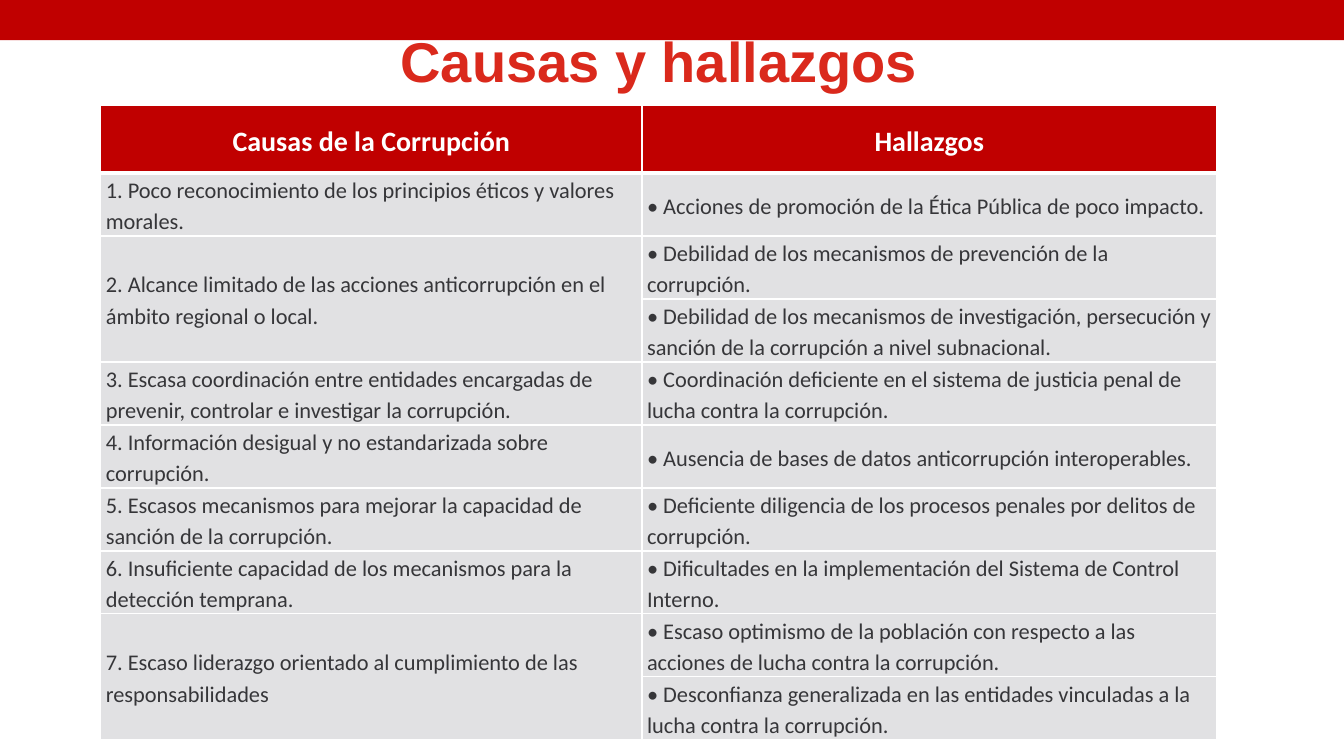
from dataclasses import dataclass

from lxml import etree
from pptx import Presentation
from pptx import util as u
from pptx.dml.color import RGBColor
from pptx.enum import shapes, text
from pptx.oxml import ns

COLORS = {
    "red": "C00000",
    "title": "DA291C",
    "body": "E1E1E3",
    "ink": "363639",
    "white": "FFFFFF",
}
SLIDE_WIDTH, SLIDE_HEIGHT = 960, 540
HEADER_HEIGHT, ROW_HEIGHT = 48.6, 45
COLUMN_WIDTHS = (386.6, 410.4)


@dataclass(frozen=True)
class TextStyle:
    font: str
    size: float
    color: str
    bold: bool = False
    align: text.PP_ALIGN = text.PP_ALIGN.LEFT
    spacing: float = 1.15


@dataclass(frozen=True)
class CellStyle:
    text: TextStyle
    fill: str
    bottom: float = 1


@dataclass(frozen=True)
class Cause:
    name: str
    findings: tuple[str, ...]


CENTER = text.PP_ALIGN.CENTER
TITLE = TextStyle("Arial", 40, "title", True, CENTER, 0.9)
HEADER = CellStyle(TextStyle("Calibri", 20, "white", True, CENTER), "red", 3)
BODY = CellStyle(TextStyle("Calibri", 16, "ink"), "body")

HEADINGS = ("Causas de la Corrupción", "Hallazgos")
CAUSES = (
    Cause("Poco reconocimiento de los principios éticos y valores morales.",
          ("Acciones de promoción de la Ética Pública de poco impacto.",)),
    Cause("Alcance limitado de las acciones anticorrupción en el ámbito regional o local.",
          ("Debilidad de los mecanismos de prevención de la corrupción.",
           "Debilidad de los mecanismos de investigación, persecución y sanción "
           "de la corrupción a nivel subnacional.")),
    Cause("Escasa coordinación entre entidades encargadas de prevenir, controlar "
          "e investigar la corrupción.",
          ("Coordinación deficiente en el sistema de justicia penal de lucha "
           "contra la corrupción.",)),
    Cause("Información desigual y no estandarizada sobre corrupción.",
          ("Ausencia de bases de datos anticorrupción interoperables.",)),
    Cause("Escasos mecanismos para mejorar la capacidad de sanción de la corrupción.",
          ("Deficiente diligencia de los procesos penales por delitos de corrupción.",)),
    Cause("Insuficiente capacidad de los mecanismos para la detección temprana.",
          ("Dificultades en la implementación del Sistema de Control Interno.",)),
    Cause("Escaso liderazgo orientado al cumplimiento de las responsabilidades",
          ("Escaso optimismo de la población con respecto a las acciones de lucha "
           "contra la corrupción.",
           "Desconfianza generalizada en las entidades vinculadas a la lucha "
           "contra la corrupción.")),
)


def rgb(name: str) -> RGBColor:
    return RGBColor.from_string(COLORS[name])


def write(frame, words: str, style: TextStyle) -> None:
    paragraph = frame.paragraphs[0]
    paragraph.alignment = style.align
    paragraph.line_spacing = style.spacing
    run = paragraph.add_run()
    run.text = words
    run.font.name = style.font
    run.font.size = u.Pt(style.size)
    run.font.bold = style.bold
    run.font.color.rgb = rgb(style.color)


def set_borders(cell, bottom: float) -> None:
    """Put white lines on all four sides, ahead of the fill as the schema asks."""
    properties = cell._tc.get_or_add_tcPr()
    widths = {"lnL": 1, "lnR": 1, "lnT": 1, "lnB": bottom}
    for position, (side, width) in enumerate(widths.items()):
        line = etree.Element(ns.qn(f"a:{side}"), w=str(u.Pt(width)))
        fill = etree.SubElement(line, ns.qn("a:solidFill"))
        etree.SubElement(fill, ns.qn("a:srgbClr"), val=COLORS["white"])
        properties.insert(position, line)


def style_cell(cell, style: CellStyle) -> None:
    cell.margin_left = cell.margin_right = u.Pt(3.6)
    cell.margin_top = cell.margin_bottom = u.Pt(0)
    cell.vertical_anchor = text.MSO_ANCHOR.MIDDLE
    cell.fill.solid()
    cell.fill.fore_color.rgb = rgb(style.fill)
    set_borders(cell, style.bottom)


def draw_band(slide) -> None:
    band = slide.shapes.add_shape(shapes.MSO_SHAPE.RECTANGLE, u.Pt(0), u.Pt(0),
                                  u.Pt(SLIDE_WIDTH), u.Pt(28.8))
    band.shadow.inherit = False
    band.fill.solid()
    band.fill.fore_color.rgb = rgb("red")
    band.line.fill.background()


def draw_title(slide) -> None:
    title = slide.shapes.add_textbox(u.Pt(0), u.Pt(21), u.Pt(941), u.Pt(50))
    title.text_frame.word_wrap = True
    title.text_frame.vertical_anchor = text.MSO_ANCHOR.MIDDLE
    write(title.text_frame, "Causas y hallazgos", TITLE)


def draw_causes(slide) -> None:
    finding_count = sum(len(cause.findings) for cause in CAUSES)
    table = slide.shapes.add_table(
        finding_count + 1, len(HEADINGS), u.Pt(72), u.Pt(75),
        u.Pt(sum(COLUMN_WIDTHS)), u.Pt(HEADER_HEIGHT + finding_count * ROW_HEIGHT),
    ).table
    table.horz_banding = False
    for column, width in zip(table.columns, COLUMN_WIDTHS):
        column.width = u.Pt(width)
    for index, row in enumerate(table.rows):
        row.height = u.Pt(ROW_HEIGHT if index else HEADER_HEIGHT)
        for cell in row.cells:
            style_cell(cell, BODY if index else HEADER)

    for column, heading in enumerate(HEADINGS):
        write(table.cell(0, column).text_frame, heading, HEADER.text)
    first = 1
    for number, cause in enumerate(CAUSES, start=1):
        last = first + len(cause.findings) - 1
        cause_cell = table.cell(first, 0)
        if last > first:
            cause_cell.merge(table.cell(last, 0))
        write(cause_cell.text_frame, f"{number}. {cause.name}", BODY.text)
        for row, finding in enumerate(cause.findings, start=first):
            write(table.cell(row, 1).text_frame, f"• {finding}", BODY.text)
        first = last + 1


def main() -> None:
    deck = Presentation()
    deck.slide_width, deck.slide_height = u.Pt(SLIDE_WIDTH), u.Pt(SLIDE_HEIGHT)
    slide = deck.slides.add_slide(deck.slide_layouts[6])
    draw_band(slide)
    draw_causes(slide)
    draw_title(slide)
    deck.save("out.pptx")


if __name__ == "__main__":
    main()
